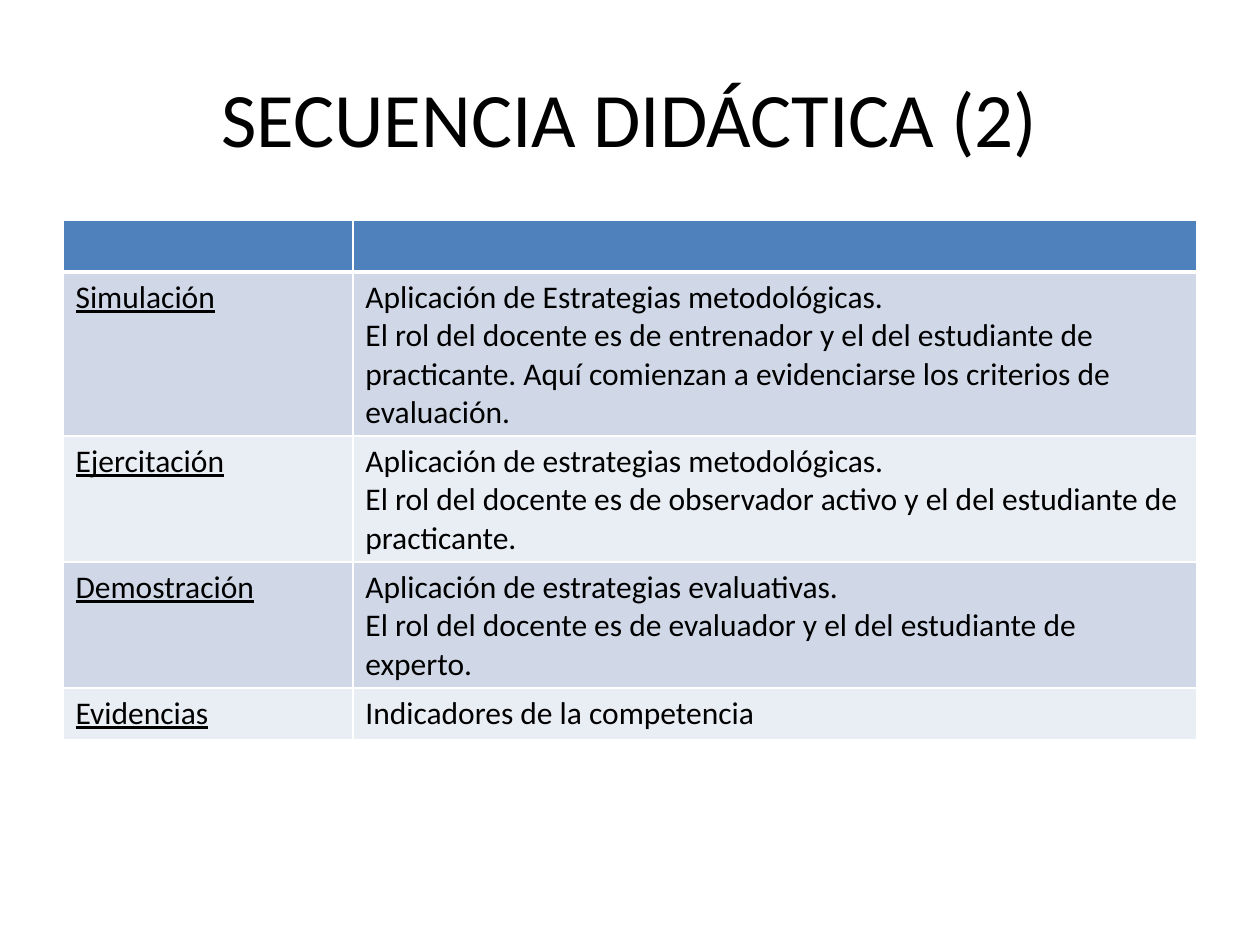
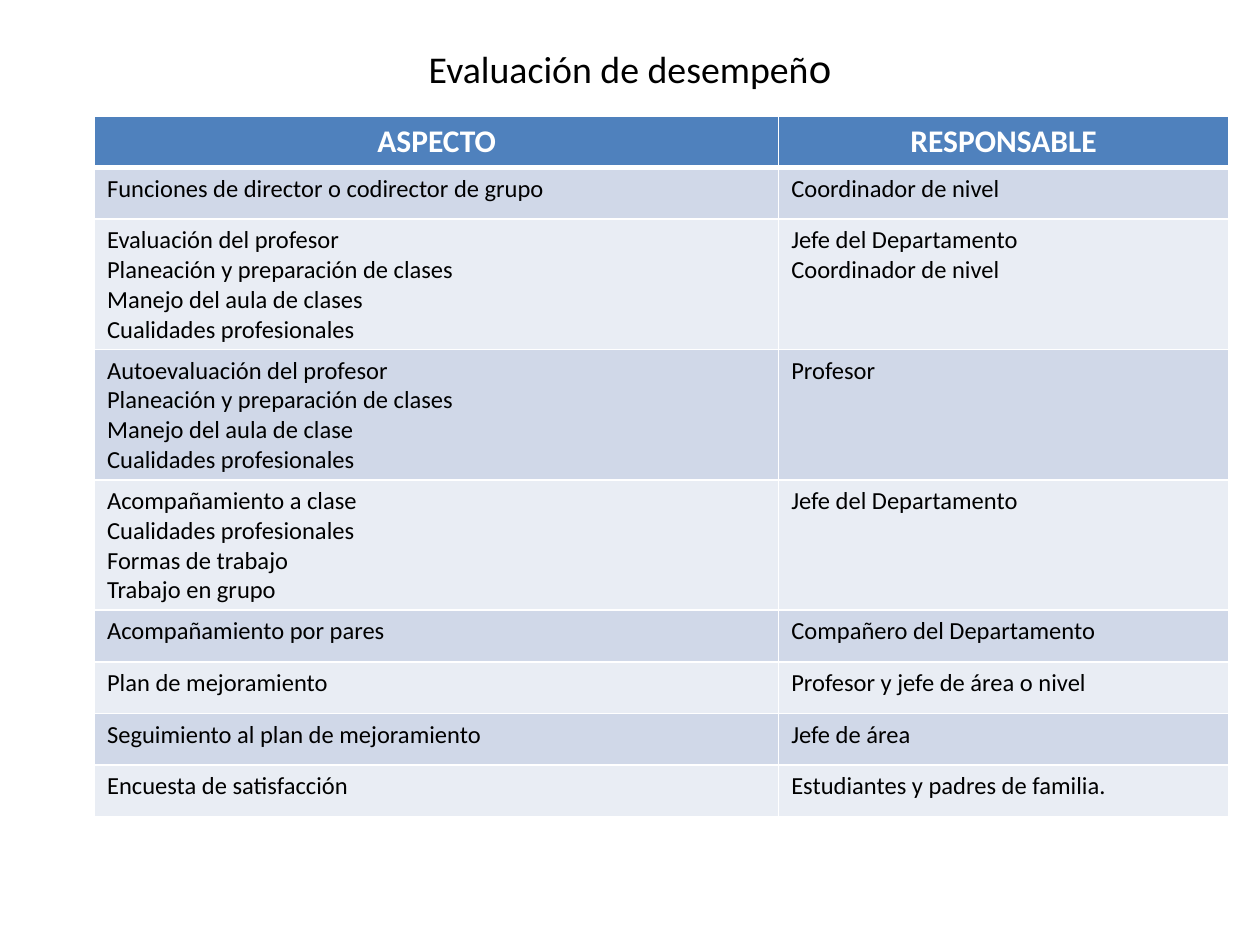
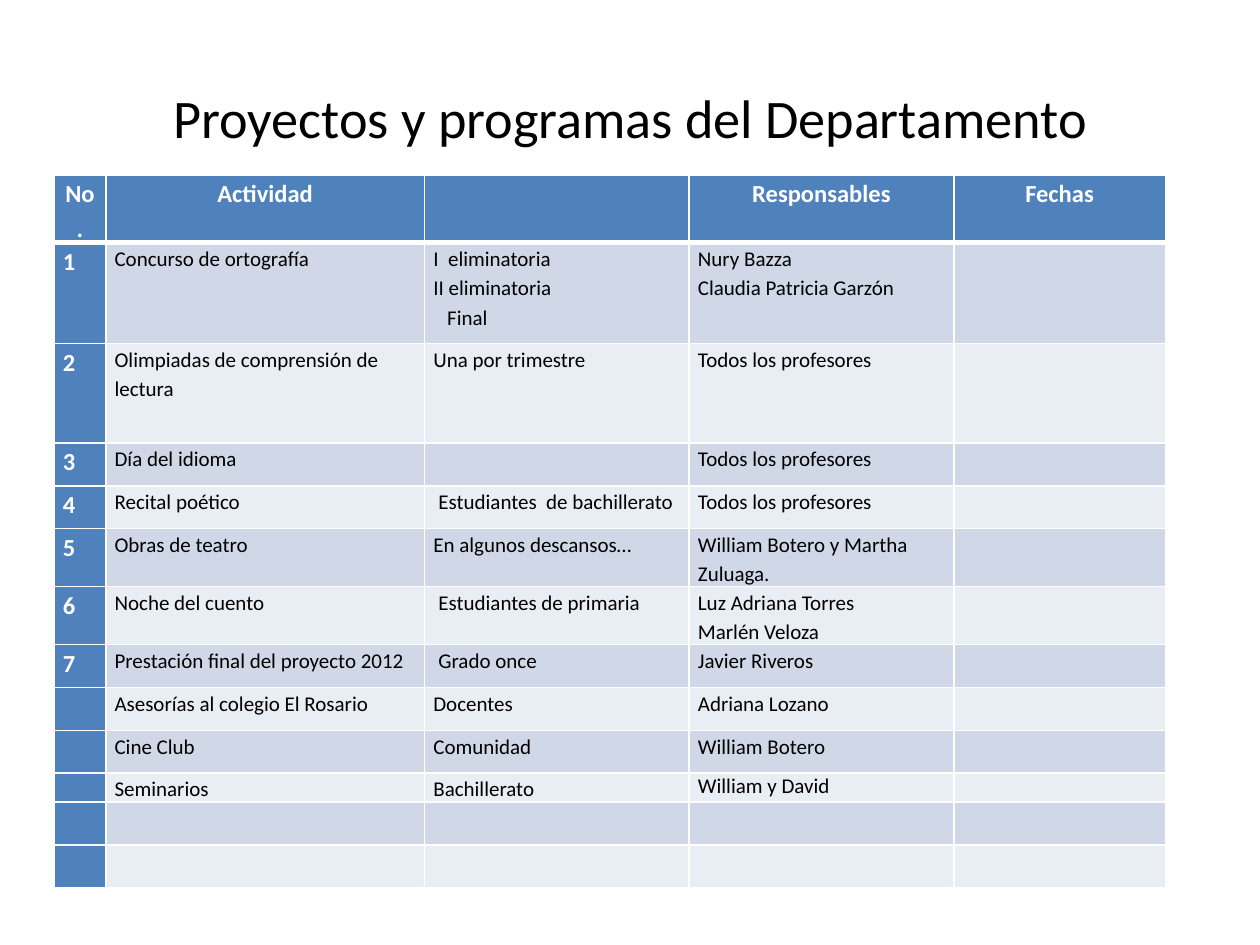
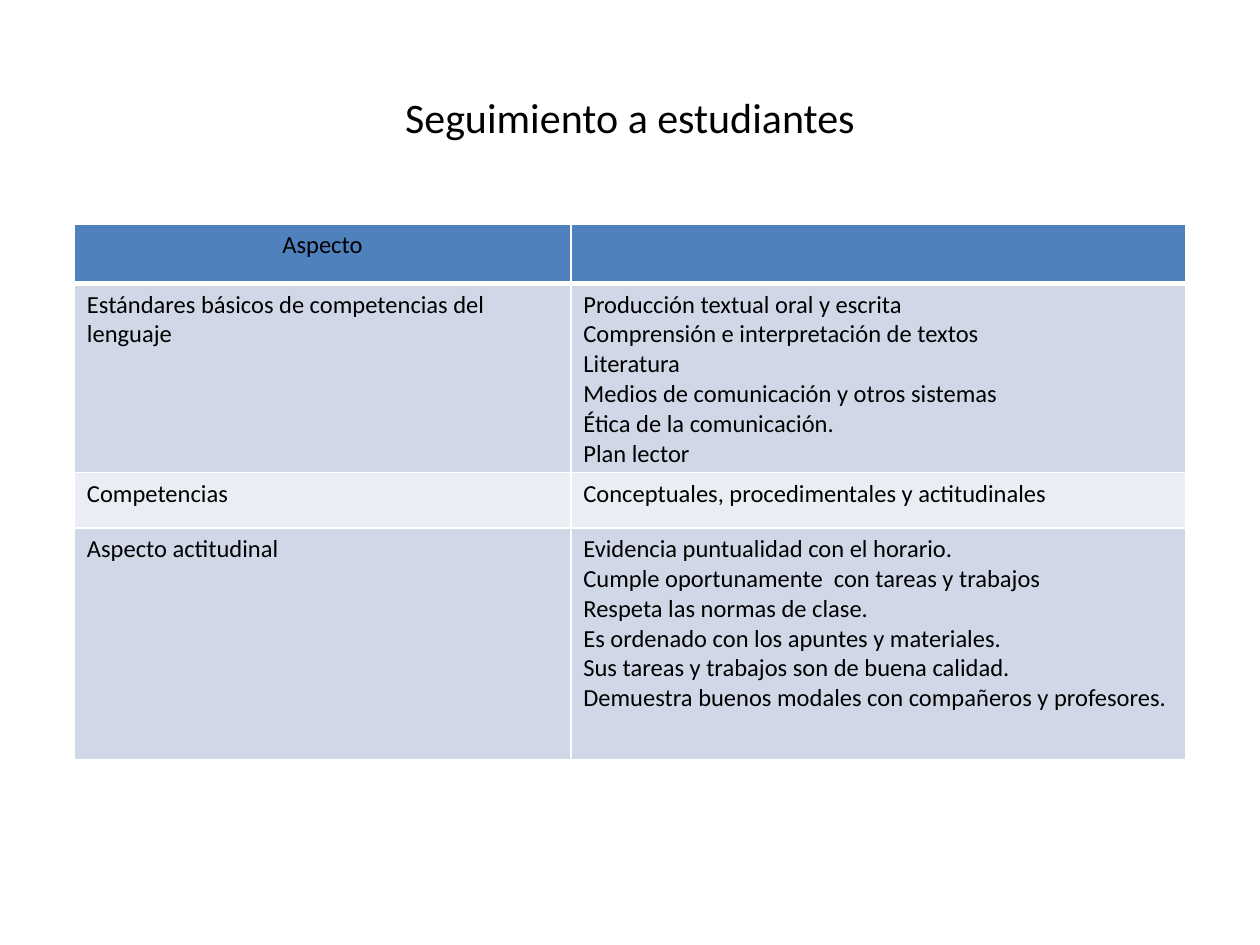
from lxml import etree
from pptx import Presentation
from pptx.dml.color import RGBColor
from pptx.enum.text import MSO_ANCHOR, PP_ALIGN
from pptx.oxml.ns import qn
from pptx.util import Inches, Pt

CENTER, LEFT = PP_ALIGN.CENTER, PP_ALIGN.LEFT
MIDDLE = MSO_ANCHOR.MIDDLE

BLACK = RGBColor(0x00, 0x00, 0x00)
WHITE = RGBColor(0xFF, 0xFF, 0xFF)
HEADER_BLUE = RGBColor(0x4F, 0x81, 0xBD)
BANDS = (RGBColor(0xD0, 0xD8, 0xE8), RGBColor(0xE9, 0xED, 0xF4))
FONT = "Calibri"
EDGES = ("a:lnL", "a:lnR", "a:lnT", "a:lnB")
THIN, THICK = 1, 3

# A cell is a string or a list of lines; a line is a string or (string, format).
SEQUENCE_ROWS = [
    ("", ""),
    ("Simulación", [
        "Aplicación de Estrategias metodológicas.",
        "El rol del docente es de entrenador y el del estudiante de practicante. "
        "Aquí comienzan a evidenciarse los criterios de evaluación."]),
    ("Ejercitación", [
        "Aplicación de estrategias metodológicas.",
        "El rol del docente es de observador activo y el del estudiante de practicante."]),
    ("Demostración", [
        "Aplicación de estrategias evaluativas.",
        "El rol del docente es de evaluador y el del estudiante de experto."]),
    ("Evidencias", "Indicadores de la competencia"),
]

EVALUATION_ROWS = [
    ("ASPECTO", "RESPONSABLE"),
    ("Funciones de director o codirector de grupo", "Coordinador de nivel"),
    (["Evaluación del profesor", "Planeación y preparación de clases",
      "Manejo del aula de clases", "Cualidades profesionales"],
     ["Jefe del Departamento", "Coordinador de nivel"]),
    (["Autoevaluación del profesor", "Planeación y preparación de clases",
      "Manejo del aula de clase", "Cualidades profesionales"], "Profesor"),
    (["Acompañamiento a clase", "Cualidades profesionales",
      "Formas de trabajo", "Trabajo en grupo"], "Jefe del Departamento"),
    ("Acompañamiento por pares", "Compañero del Departamento"),
    ("Plan de mejoramiento", "Profesor y jefe de área o nivel"),
    ("Seguimiento al plan de mejoramiento", "Jefe de área"),
    ("Encuesta de satisfacción", "Estudiantes y padres de familia."),
]

SHIFTED = {"indent": 0.04}
PROJECT_ROWS = [
    ("No.", "Actividad", "", "Responsables", "Fechas"),
    ("1", "Concurso de ortografía",
     ["I  eliminatoria", "II eliminatoria", ("Final", {"indent": 0.11})],
     ["Nury Bazza", "Claudia Patricia Garzón"], ""),
    ("2", "Olimpiadas de comprensión de lectura", "Una por trimestre",
     "Todos los profesores", ""),
    ("3", "Día del idioma", "", "Todos los profesores", ""),
    ("4", "Recital poético", [("Estudiantes  de bachillerato", SHIFTED)],
     "Todos los profesores", ""),
    ("5", "Obras de teatro", "En algunos descansos…",
     "William Botero y Martha Zuluaga.", ""),
    ("6", "Noche del cuento", [("Estudiantes de primaria", SHIFTED)],
     ["Luz Adriana Torres", "Marlén Veloza"], ""),
    ("7", "Prestación final del proyecto 2012", [("Grado once", SHIFTED)],
     "Javier Riveros", ""),
    ("", "Asesorías al colegio El Rosario", "Docentes", "Adriana Lozano", ""),
    ("", "Cine Club", "Comunidad", "William Botero", ""),
    ("", "Seminarios", "Bachillerato", [("William y David", {"spacing": 1.0})], ""),
    ("",) * 5,
    ("",) * 5,
]

FOLLOW_UP_ROWS = [
    ("Aspecto", ""),
    ("Estándares básicos de competencias del lenguaje", [
        "Producción textual oral y escrita",
        "Comprensión e interpretación de textos",
        "Literatura",
        "Medios de comunicación y otros sistemas",
        "Ética de la comunicación.",
        "Plan lector"]),
    ("Competencias", "Conceptuales, procedimentales y actitudinales"),
    ("Aspecto actitudinal", [
        "Evidencia puntualidad con el horario.",
        "Cumple oportunamente  con tareas y trabajos",
        "Respeta las normas de clase.",
        "Es ordenado con los apuntes y materiales.",
        "Sus tareas y trabajos son de buena calidad.",
        "Demuestra buenos modales con compañeros y profesores."]),
]

WHITE_BOLD = {"color": WHITE, "bold": True}
SLIDES = [
    {"title": [("SECUENCIA DIDÁCTICA (2)", 44)],
     "table": {"rows": SEQUENCE_ROWS, "corner": (0.5, 1.75), "widths": (2.3, 6.7),
               "heights": [0.41] * 5, "body": {"size": 18},
               "first_column": {"underline": True}}},
    {"title": [("Evaluación de desempeñ", 21.6), ("o", 24.3)], "title_height": 0.46,
     "table": {"rows": EVALUATION_ROWS, "corner": (0.75, 0.92), "widths": (5.43, 3.57),
               "heights": [0.41] * 9, "body": {"size": 14},
               "header": {"size": 18, **WHITE_BOLD}}},
    {"title": [("Proyectos y programas del Departamento", 31)],
     "table": {"rows": PROJECT_ROWS, "corner": (0.43, 1.39),
               "widths": (0.41, 2.53, 2.1, 2.1, 1.68),
               "heights": [0.4, 0.8, 0.79] + [0.34] * 7 + [0] + [0.34] * 2,
               "body": {"size": 12, "spacing": 1.15},
               "header": {"size": 14, **WHITE_BOLD},
               "first_column": {"size": 14, **WHITE_BOLD},
               "blue_column": True, "margins": (0.07, 0)}},
    {"title": [("Seguimiento a estudiantes", 24)],
     "table": {"rows": FOLLOW_UP_ROWS, "corner": (0.59, 1.78), "widths": (3.94, 4.88),
               "heights": [0.47, 1.49, 0.44, 1.84], "body": {"size": 14}}},
]


def add_text(para, text, size, color=BLACK, bold=False, underline=False,
             align=LEFT, spacing=None, indent=0):
    para.alignment = align
    if spacing:
        para.line_spacing = spacing
    if indent:
        para._p.get_or_add_pPr().set("marL", str(Inches(indent)))
    if not text:
        # The end mark keeps an empty cell from growing to the default size.
        etree.SubElement(para._p, qn("a:endParaRPr"), sz=str(size * 100))
        return
    span = para.add_run()
    span.text = text
    font = span.font
    font.name, font.size, font.bold, font.underline = FONT, Pt(size), bold, underline
    font.color.rgb = color


def add_title(page, parts, height):
    box = page.shapes.add_textbox(Inches(0.5), Inches(0.3), Inches(9), Inches(height))
    frame = box.text_frame
    frame.word_wrap = True
    frame.vertical_anchor = MIDDLE
    for text, size in parts:
        add_text(frame.paragraphs[0], text, size, align=CENTER)


def set_borders(cell, widths):
    """Draw white borders; widths are points in the order of EDGES."""
    properties = cell._tc.get_or_add_tcPr()
    for index, (edge, width) in enumerate(zip(EDGES, widths)):
        line = etree.Element(qn(edge), w=str(Pt(width)))
        fill = etree.SubElement(line, qn("a:solidFill"))
        etree.SubElement(fill, qn("a:srgbClr"), val=str(WHITE))
        properties.insert(index, line)


def fill_cell(cell, content, text_format):
    lines = content if isinstance(content, list) else [content]
    frame = cell.text_frame
    for index, line in enumerate(lines):
        text, extra = (line, {}) if isinstance(line, str) else line
        para = frame.add_paragraph() if index else frame.paragraphs[0]
        add_text(para, text, **{**text_format, **extra})


def add_table(page, rows, corner, widths, heights, body, header=None,
              first_column=None, blue_column=False, margins=None):
    left, top = map(Inches, corner)
    table = page.shapes.add_table(len(rows), len(widths), left, top,
                                  Inches(sum(widths)), Inches(sum(heights))).table
    for column, width in zip(table.columns, widths):
        column.width = Inches(width)
    for row_index, (row, height) in enumerate(zip(rows, heights)):
        table.rows[row_index].height = Inches(height)
        for column_index, content in enumerate(row):
            cell = table.cell(row_index, column_index)
            text_format = dict(body)
            if row_index == 0:
                text_format.update(header or {}, align=CENTER)
            elif column_index == 0:
                text_format.update(first_column or {})
            if not content:
                text_format["size"] = body["size"]
            if margins:
                cell.margin_left = cell.margin_right = Inches(margins[0])
                cell.margin_top = cell.margin_bottom = Inches(margins[1])
            fill_cell(cell, content, text_format)
            is_blue = row_index == 0 or (blue_column and column_index == 0)
            cell.fill.solid()
            cell.fill.fore_color.rgb = HEADER_BLUE if is_blue else BANDS[(row_index - 1) % 2]
            set_borders(cell, (THIN, THIN, THICK if row_index == 1 else THIN,
                               THICK if row_index == 0 else THIN))


def main():
    deck = Presentation()
    deck.slide_width, deck.slide_height = Inches(10), Inches(7.5)
    blank = deck.slide_layouts[6]
    for content in SLIDES:
        page = deck.slides.add_slide(blank)
        add_title(page, content["title"], content.get("title_height", 1.25))
        add_table(page, **content["table"])
    deck.save("out.pptx")


if __name__ == "__main__":
    main()
